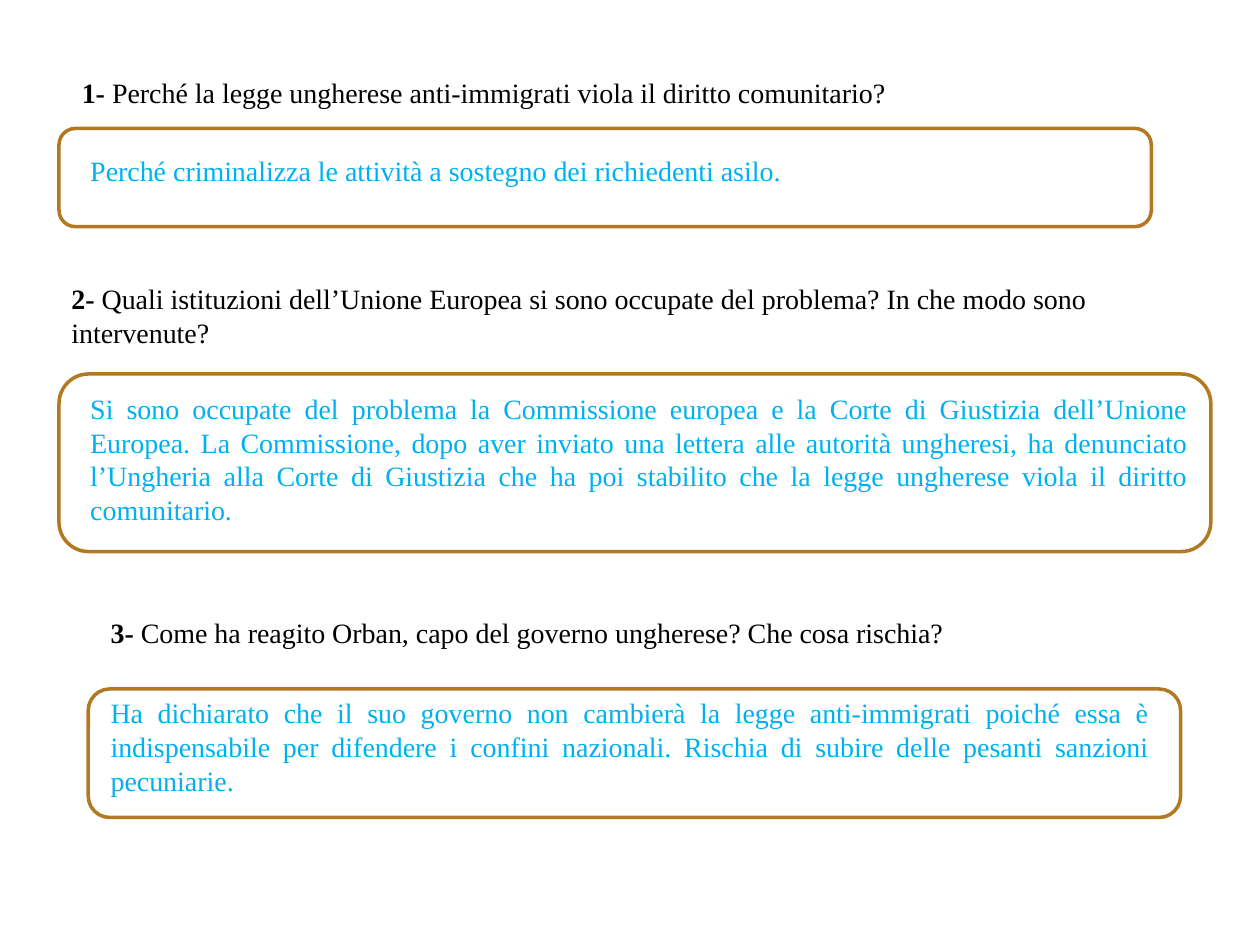
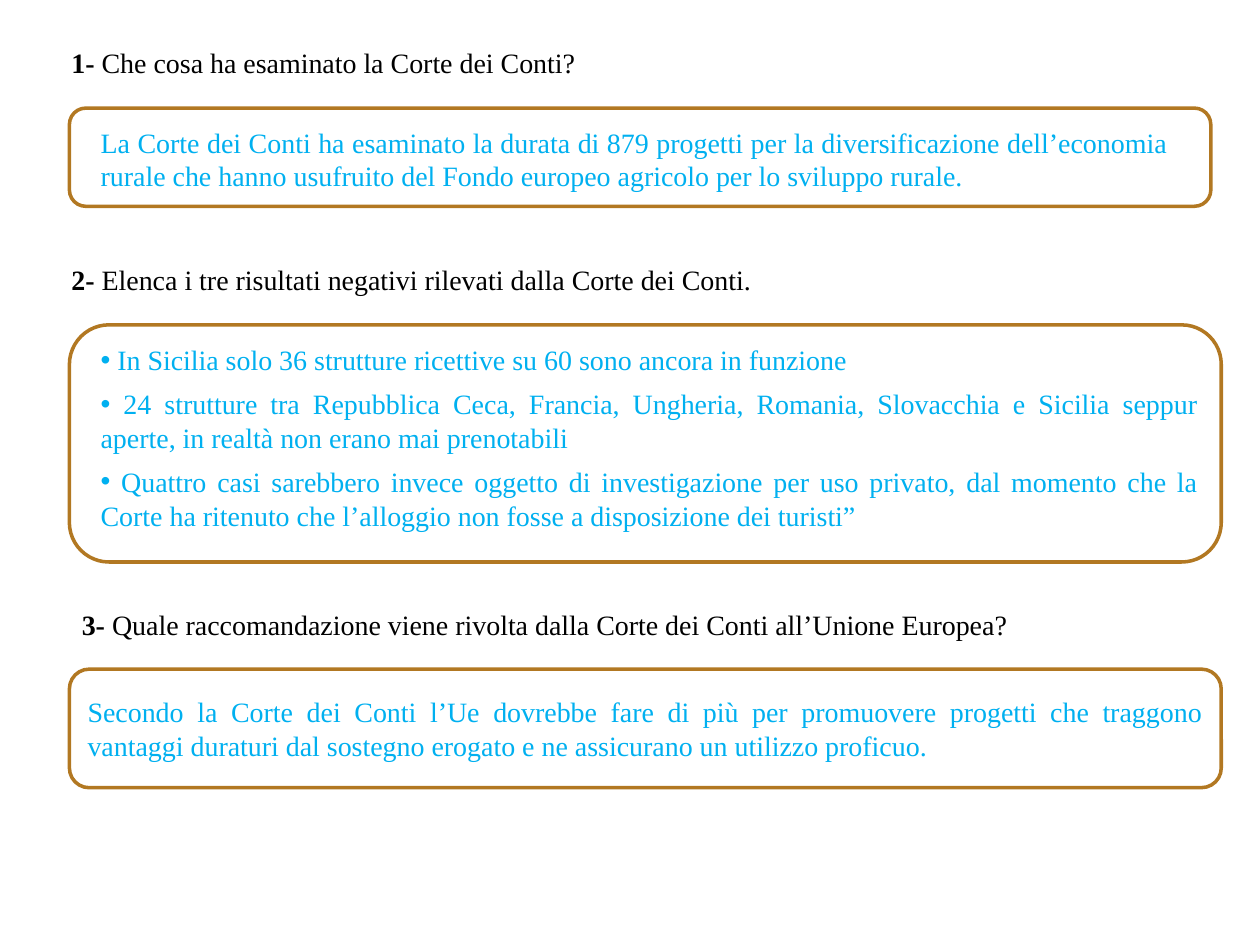
from dataclasses import dataclass
from lxml.etree import SubElement
from pptx import Presentation
from pptx.dml.color import RGBColor as Rgb
from pptx.enum.shapes import MSO_SHAPE as Shape
from pptx.enum.text import MSO_ANCHOR as Anchor, MSO_AUTO_SIZE as Fit, PP_ALIGN as Align
from pptx.oxml.ns import qn
from pptx.util import Cm, Pt

SLIDES = [
    [
        {
            "ask": "Perché la legge ungherese anti-immigrati viola il diritto comunitario?",
            "reply": ["Perché criminalizza le attività a sostegno dei richiedenti asilo."],
            "head": (1.4, 1.4, 23.01, 0.94),
            "frame": (1.19, 2.59, 22.02, 1.98),
            "body": (1.57, 2.97, 20.83, 0.94),
        },
        {
            "ask": "Quali istituzioni dell’Unione Europea si sono occupate del problema? "
                   "In che modo sono intervenute?",
            "reply": ["Si sono occupate del problema la Commissione europea e la Corte di Giustizia "
                      "dell’Unione Europea. La Commissione, dopo aver inviato una lettera alle "
                      "autorità ungheresi, ha denunciato l’Ungheria alla Corte di Giustizia che ha "
                      "poi stabilito che la legge ungherese viola il diritto comunitario."],
            "head": (1.19, 5.56, 23.42, 1.63),
            "frame": (1.19, 7.54, 23.22, 3.58),
            "body": (1.57, 7.75, 22.63, 3),
        },
        {
            "ask": "Come ha reagito Orban, capo del governo ungherese? Che cosa rischia?",
            "reply": ["Ha dichiarato che il suo governo non cambierà la legge anti-immigrati poiché "
                      "essa è indispensabile per difendere i confini nazionali. Rischia di subire "
                      "delle pesanti sanzioni pecuniarie."],
            "head": (1.98, 12.29, 23.01, 0.94),
            "frame": (1.78, 13.89, 22.02, 2.59),
            "body": (1.98, 13.89, 21.44, 2.31),
        },
    ],
    [
        {
            "ask": "Che cosa ha esaminato la Corte dei Conti?",
            "reply": ["La Corte dei Conti ha esaminato la durata di 879 progetti per la "
                      "diversificazione dell’economia rurale che hanno usufruito del Fondo europeo "
                      "agricolo per lo sviluppo rurale."],
            "head": (1.19, 0.79, 23.01, 0.94),
            "frame": (1.4, 2.18, 23.01, 1.98),
            "body": (1.78, 2.39, 22.02, 1.63),
        },
        {
            "ask": "Elenca i tre risultati negativi rilevati dalla Corte dei Conti.",
            "reply": [" In Sicilia solo 36 strutture ricettive su 60 sono ancora in funzione",
                      " 24 strutture tra Repubblica Ceca, Francia, Ungheria, Romania, Slovacchia e "
                      "Sicilia seppur aperte, in realtà non erano mai prenotabili",
                      " Quattro casi sarebbero invece oggetto di investigazione per uso privato, "
                      "dal momento che la Corte ha ritenuto che l’alloggio non fosse a "
                      "disposizione dei turisti”"],
            "head": (1.19, 5.16, 23.01, 0.94),
            "frame": (1.4, 6.55, 23.22, 4.78),
            "body": (1.78, 6.76, 22.63, 4.11),
        },
        {
            "ask": "Quale raccomandazione viene rivolta dalla Corte dei Conti all’Unione Europea?",
            "reply": ["Secondo la Corte dei Conti l’Ue dovrebbe fare di più per promuovere progetti "
                      "che traggono vantaggi duraturi dal sostegno erogato e ne assicurano un "
                      "utilizzo proficuo."],
            "head": (1.4, 12.12, 23.01, 0.94),
            "frame": (1.4, 13.49, 23.22, 2.39),
            "body": None,
        },
    ],
]


@dataclass(frozen=True)
class Theme:
    ink: Rgb = Rgb(0, 0, 0)
    blue: Rgb = Rgb(0, 176, 240)
    brown: Rgb = Rgb(178, 120, 34)
    paper: Rgb = Rgb(255, 255, 255)
    face: str = "Times New Roman"
    size: Pt = Pt(16)
    edge: Pt = Pt(2)
    gap: Pt = Pt(6)


THEME = Theme()


def place(box):
    return [Cm(side) for side in box]


def apply(item, **values):
    for name, value in values.items():
        setattr(item, name, value)


def add_run(para, text, color, bold=False):
    run = para.add_run()
    run.text = text
    apply(run.font, name=THEME.face, size=THEME.size, bold=bold)
    run.font.color.rgb = color


def add_box(slide, box, anchor):
    shape = slide.shapes.add_textbox(*place(box))
    apply(shape.text_frame, word_wrap=True, auto_size=Fit.SHAPE_TO_FIT_TEXT,
          vertical_anchor=anchor)
    return shape


def add_frame(slide, box):
    shape = slide.shapes.add_shape(Shape.ROUNDED_RECTANGLE, *place(box))
    shape.shadow.inherit = False
    shape.fill.solid()
    shape.fill.fore_color.rgb = THEME.paper
    shape.line.color.rgb = THEME.brown
    shape.line.width = THEME.edge
    apply(shape.text_frame, word_wrap=True, vertical_anchor=Anchor.MIDDLE)
    return shape


def add_ask(slide, number, item):
    para = add_box(slide, item["head"], Anchor.TOP).text_frame.paragraphs[0]
    add_run(para, f"{number}- ", THEME.ink, bold=True)
    add_run(para, item["ask"], THEME.ink)


def add_reply(slide, item):
    shape = add_frame(slide, item["frame"])
    if item["body"]:
        shape = add_box(slide, item["body"], Anchor.MIDDLE)
    frame, lines = shape.text_frame, item["reply"]
    for index, line in enumerate(lines):
        para = frame.add_paragraph() if index else frame.paragraphs[0]
        para.alignment = Align.JUSTIFY
        if len(lines) > 1:
            props = para._p.get_or_add_pPr()
            SubElement(props, qn("a:buFont"), typeface="Arial")
            SubElement(props, qn("a:buChar"), char="•")
        if index < len(lines) - 1:
            para.space_after = THEME.gap
        add_run(para, line, THEME.blue)


def main():
    deck = Presentation()
    apply(deck, slide_width=Cm(25.4), slide_height=Cm(19.05))
    blank = deck.slide_layouts[6]
    for items in SLIDES:
        slide = deck.slides.add_slide(blank)
        for number, item in enumerate(items, 1):
            add_ask(slide, number, item)
            add_reply(slide, item)
    deck.save("out.pptx")


if __name__ == "__main__":
    main()
